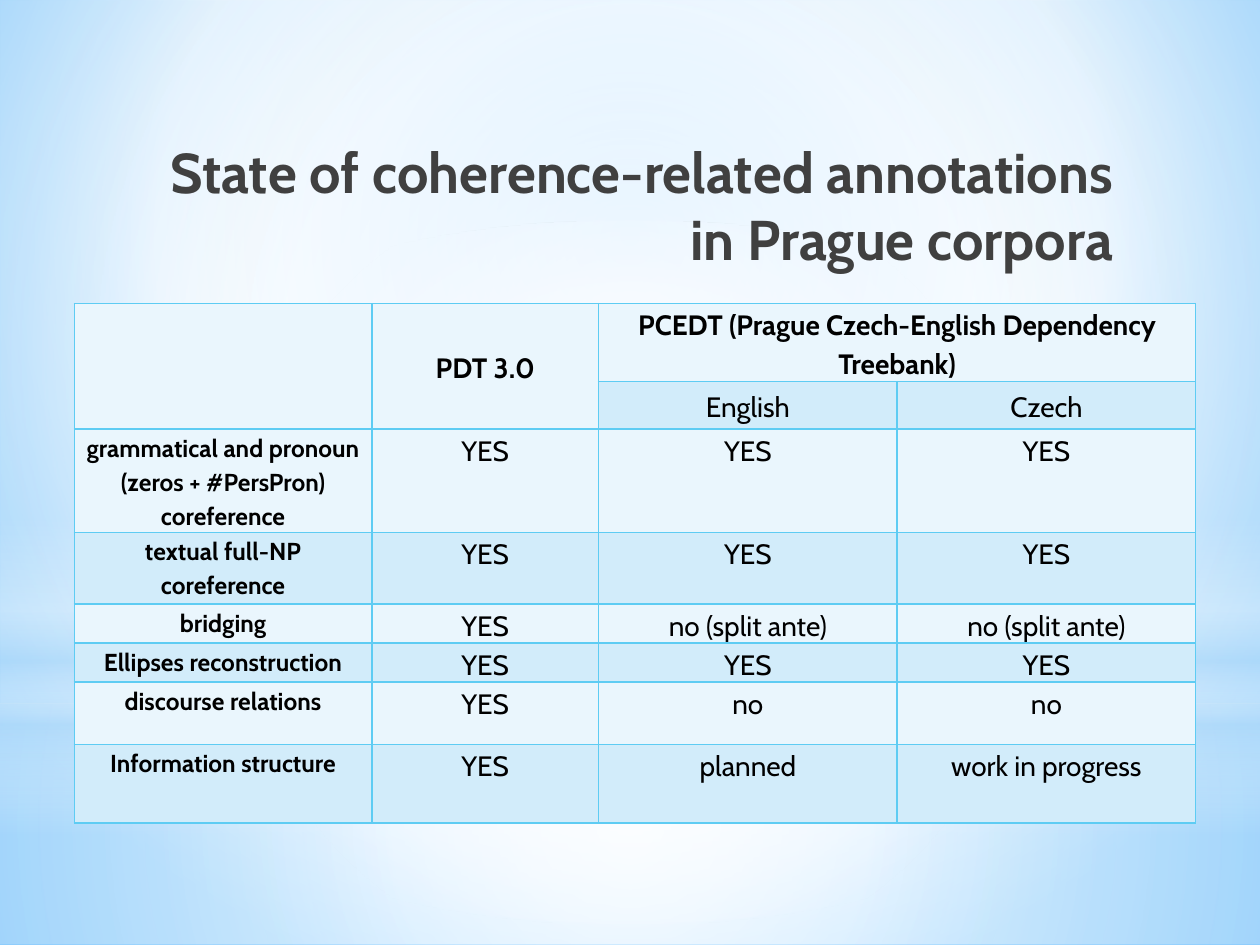
from lxml.etree import SubElement
from pptx import Presentation
from pptx.dml.color import RGBColor
from pptx.enum.shapes import MSO_SHAPE
from pptx.enum.text import MSO_ANCHOR, PP_ALIGN
from pptx.oxml.ns import qn
from pptx.util import Pt

FONT = "Cabin"
WHITE = RGBColor(0xFF, 0xFF, 0xFF)
BLACK = RGBColor(0x00, 0x00, 0x00)
DARK = RGBColor(0x40, 0x40, 0x40)
SKY = RGBColor(0x9E, 0xD5, 0xFF)
BLUE = RGBColor(0x5B, 0xB9, 0xFF)
HAZE = RGBColor(0xB4, 0xDC, 0xFA)
PALE = RGBColor(0xEA, 0xF6, 0xFD)
BAND = RGBColor(0xD2, 0xEC, 0xFA)
BORDER = RGBColor(0x5E, 0xCC, 0xF3)

CENTRE = (50, 50, 50, 50)
COL_WIDTHS = [170, 129.6, 170.6, 170.6]
ROW_HEIGHTS = [44.6, 27.2, 59, 41, 22.3, 22.3, 35.5, 45]
ROWS = [
    ["", "PDT 3.0", "PCEDT (Prague Czech-English Dependency Treebank)", ""],
    ["", "", "English", "Czech"],
    ["grammatical and pronoun (zeros + #PersPron) coreference", "YES", "YES", "YES"],
    ["textual full-NP coreference", "YES", "YES", "YES"],
    ["bridging", "YES", "no (split ante)", "no (split ante)"],
    ["Ellipses reconstruction", "YES", "YES", "YES"],
    ["discourse relations", "YES", "no", "no"],
    ["Information structure", "YES", "planned", "work in progress"],
]


def set_gradient(props, stops, focus=None):
    """Replace the solid fill in props; without a focus the gradient runs downwards."""
    solid = props.find(qn("a:solidFill"))
    grad = props.makeelement(qn("a:gradFill"), {"rotWithShape": "1"})
    props.replace(solid, grad)
    gs_list = SubElement(grad, qn("a:gsLst"))
    for pos, color, alpha in stops:
        gs = SubElement(gs_list, qn("a:gs"), pos=str(pos * 1000))
        clr = SubElement(gs, qn("a:srgbClr"), val=str(color))
        if alpha < 100:
            SubElement(clr, qn("a:alpha"), val=str(alpha * 1000))
    if focus is None:
        SubElement(grad, qn("a:lin"), ang="5400000", scaled="0")
    else:
        path = SubElement(grad, qn("a:path"), path="circle")
        sides = {side: str(v * 1000) for side, v in zip("ltrb", focus)}
        SubElement(path, qn("a:fillToRect"), **sides)


def add_background(s):
    fill = s.background.fill
    fill.solid()
    fill.fore_color.rgb = WHITE
    set_gradient(s.element.find(".//" + qn("p:bgPr")),
                 [(0, SKY, 100), (60, WHITE, 100), (100, BLUE, 100)], (20, 10, 20, 60))


def add_glow(s, kind, top, height, stops, focus=None):
    sp = s.shapes.add_shape(kind, 0, Pt(top), Pt(720), Pt(height))
    sp.shadow.inherit = False
    sp.line.fill.background()
    sp.fill.solid()
    sp.fill.fore_color.rgb = WHITE
    set_gradient(sp.element.spPr, stops, focus)


def format_text(p, size, bold, color, align):
    p.alignment = align
    for r in p.runs:
        r.font.name = FONT
        r.font.size = Pt(size)
        r.font.bold = bold
        r.font.color.rgb = color


def add_borders(cell):
    tc_pr = cell._tc.get_or_add_tcPr()
    for i, tag in enumerate(("a:lnL", "a:lnR", "a:lnT", "a:lnB")):
        ln = tc_pr.makeelement(qn(tag), {"w": str(Pt(1))})
        tc_pr.insert(i, ln)
        SubElement(SubElement(ln, qn("a:solidFill")), qn("a:srgbClr"), val=str(BORDER))


def format_cell(cell, text, row, col):
    cell.fill.solid()
    cell.fill.fore_color.rgb = BAND if row % 2 else PALE
    add_borders(cell)
    cell.margin_left = cell.margin_right = Pt(5)
    cell.margin_top = cell.margin_bottom = 0
    if not text:
        return
    if row == 1 or (row, col) == (0, 1):
        cell.vertical_anchor = MSO_ANCHOR.MIDDLE
    cell.text_frame.text = text
    p = cell.text_frame.paragraphs[0]
    p.line_spacing = 1.15
    label = col == 0
    format_text(p, 14 if label else 16, label or row == 0, BLACK, PP_ALIGN.CENTER)


def add_annotation_table(s):
    frame = s.shapes.add_table(len(ROWS), len(COL_WIDTHS), Pt(42.5), Pt(173.5),
                               Pt(sum(COL_WIDTHS)), Pt(sum(ROW_HEIGHTS)))
    table = frame.table
    table.first_row = table.horz_banding = False
    for column, width in zip(table.columns, COL_WIDTHS):
        column.width = Pt(width)
    for row, height in zip(table.rows, ROW_HEIGHTS):
        row.height = Pt(height)
    for i, texts in enumerate(ROWS):
        for j, text in enumerate(texts):
            format_cell(table.cell(i, j), text, i, j)
    # Two-row heads on the left, one wide head over the language columns
    for j in (0, 1):
        table.cell(0, j).merge(table.cell(1, j))
    table.cell(0, 2).merge(table.cell(0, 3))


def set_title(s, text):
    sp = s.shapes.title
    sp.left, sp.top, sp.width, sp.height = Pt(20), Pt(72), Pt(623.5), Pt(90)
    tf = sp.text_frame
    tf.text = text
    tf.word_wrap = True
    tf.vertical_anchor = MSO_ANCHOR.MIDDLE
    format_text(tf.paragraphs[0], 32, True, DARK, PP_ALIGN.RIGHT)
    s.shapes._spTree.append(sp.element)  # bring in front of the glows


def main():
    prs = Presentation()
    prs.slide_width, prs.slide_height = Pt(720), Pt(540)
    s = prs.slides.add_slide(prs.slide_layouts[5])

    # Backdrop: lower and upper panels, horizon band, central glow
    add_background(s)
    add_glow(s, MSO_SHAPE.RECTANGLE, 402, 138,
             [(0, WHITE, 91), (37, WHITE, 76), (100, HAZE, 79)], CENTRE)
    add_glow(s, MSO_SHAPE.RECTANGLE, 0, 402,
             [(0, WHITE, 89), (48, WHITE, 62), (100, HAZE, 79)], CENTRE)
    add_glow(s, MSO_SHAPE.RECTANGLE, 296.6, 180,
             [(0, WHITE, 0), (29, WHITE, 30), (45, HAZE, 40),
              (55, WHITE, 26), (65, HAZE, 60), (100, WHITE, 0)])
    add_glow(s, MSO_SHAPE.OVAL, 126, 402, [(0, WHITE, 100), (56, WHITE, 0)], CENTRE)

    # Content
    add_annotation_table(s)
    set_title(s, "State of coherence-related annotations\vin Prague corpora")
    prs.save("out.pptx")


if __name__ == "__main__":
    main()
